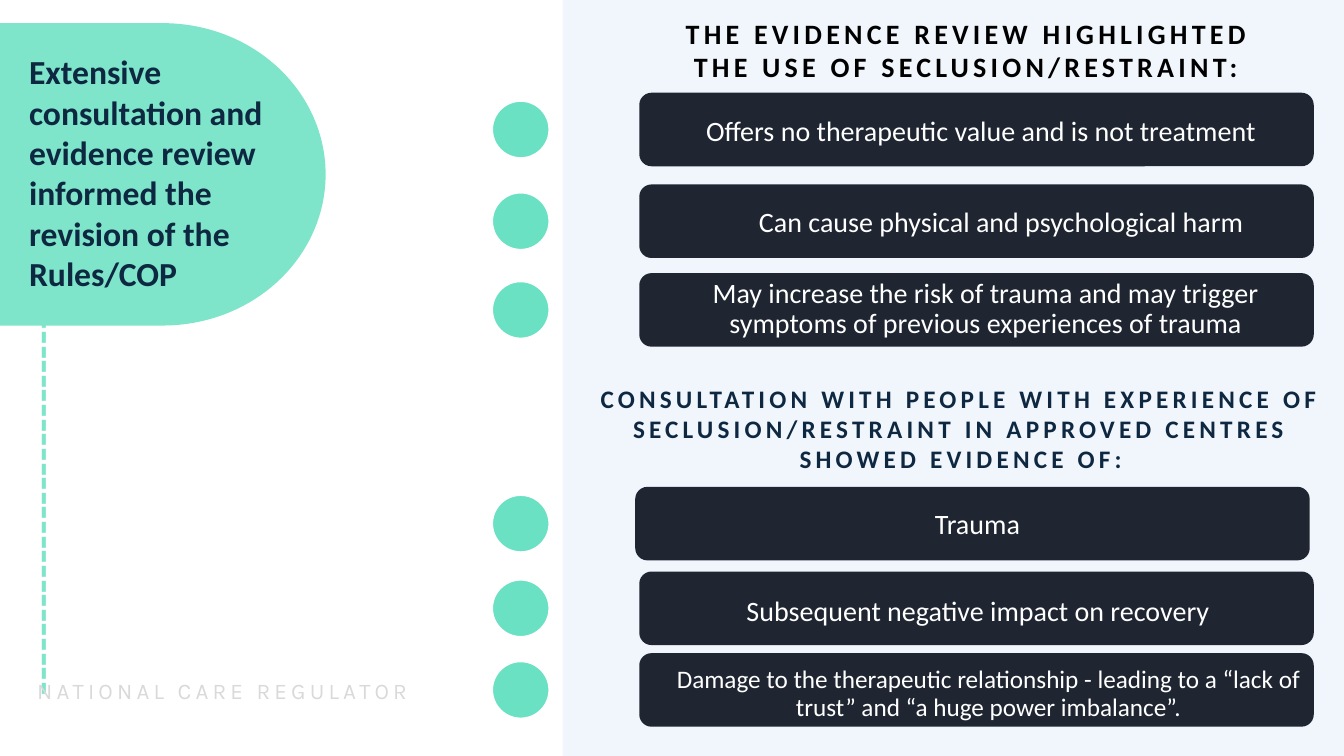
from lxml.etree import SubElement
from pptx import Presentation
from pptx.dml.color import RGBColor
from pptx.enum.shapes import MSO_SHAPE as Shape
from pptx.enum.text import MSO_AUTO_SIZE as AutoSize, PP_ALIGN as Align
from pptx.oxml.ns import qn
from pptx.util import Inches, Pt

COLOURS = {
    "mint": "7EE5CA", "dot": "6AE1C2", "panel": "B8D4F0", "bar": "1F2632",
    "navy": "0E2841", "black": "000000", "white": "FFFFFF", "footer": "D9D9D9",
}
BAR_SIZE = (6.69, 0.73)
DOT_LEFT, DOT_SIZE = 4.88, 0.57

CENTRED = {"alignment": Align.CENTER}
TIGHT = CENTRED | {"line_spacing": 0.9}
INDENTED = TIGHT | {"level": 1, "space_before": Pt(5)}
SPACED = TIGHT | {"space_before": Pt(10)}

# dot top, bar left and top, text box, size, paragraph format, wording
FINDINGS = [
    (1.0, 6.34, 0.92, (6.61, 1.08, 6.24, 0.44), 20, CENTRED,
     "Offers no therapeutic value and is not treatment"),
    (1.91, 6.34, 1.83, (6.34, 2.02, 6.68, 0.74), 20, INDENTED,
     "Can cause physical and psychological harm"),
    (2.79, 6.34, 2.71, (6.35, 2.72, 6.35, 0.71), 20, INDENTED,
     "May increase the risk of trauma and may trigger symptoms of previous experiences of trauma"),
    (4.91, 6.3, 4.83, (6.91, 4.98, 5.57, 0.44), 20, CENTRED, "Trauma"),
    (5.75, 6.34, 5.67, (5.97, 5.84, 7.46, 0.44), 20, CENTRED,
     "Subsequent negative impact on recovery"),
    (6.56, 6.34, 6.48, (6.61, 6.57, 6.39, 1.36), 18, SPACED,
     "Damage to the therapeutic relationship - leading to a “lack of trust” "
     "and “a huge power imbalance”."),
]


def colour(name):
    return RGBColor.from_string(COLOURS[name])


class SlideBuilder:
    def __init__(self, slide, font="Calibri"):
        self.shapes = slide.shapes
        self.font = font

    def block(self, kind, box, fill, outline=None, opacity=None):
        """Add a filled preset shape; opacity is a percentage."""
        shape = self.shapes.add_shape(kind, *map(Inches, box))
        shape.shadow.inherit = False
        shape.fill.solid()
        shape.fill.fore_color.rgb = colour(fill)
        if opacity is not None:
            rgb = shape.fill._xPr.find(".//" + qn("a:srgbClr"))
            SubElement(rgb, qn("a:alpha"), val=str(opacity * 1000))
        if outline:
            shape.line.color.rgb = colour(outline)
            shape.line.width = Pt(1.5)
        else:
            shape.line.fill.background()

    def text(self, box, lines, size, ink, layout=None, bold=False,
             tracking=0, font=None, rotation=0):
        """Add a text box with one paragraph per line; tracking is in points."""
        area = self.shapes.add_textbox(*map(Inches, box))
        area.rotation = rotation
        frame = area.text_frame
        frame.word_wrap = True
        frame.auto_size = AutoSize.SHAPE_TO_FIT_TEXT
        frame.text = lines
        style = {"name": font or self.font, "size": Pt(size), "bold": bold}
        for paragraph in frame.paragraphs:
            for key, value in (layout or {}).items():
                setattr(paragraph, key, value)
            if paragraph.level:
                properties = paragraph._p.get_or_add_pPr()
                properties.set("marL", str(Inches(0.5)))
                properties.set("indent", "0")
            for run in paragraph.runs:
                for key, value in style.items():
                    setattr(run.font, key, value)
                run.font.color.rgb = colour(ink)
                if tracking:
                    run.font._element.set("spc", str(tracking * 100))

    def finding(self, dot_top, bar_left, bar_top, box, size, layout, wording):
        """Add a dot, its dark bar and the statement on the bar."""
        self.block(Shape.OVAL, (DOT_LEFT, dot_top, DOT_SIZE, DOT_SIZE), "dot", "white")
        self.block(Shape.ROUNDED_RECTANGLE, (bar_left, bar_top, *BAR_SIZE), "bar")
        self.text(box, wording, size, "white", layout)


def main():
    deck = Presentation()
    deck.slide_width, deck.slide_height = Inches(13.33), Inches(7.5)
    page = SlideBuilder(deck.slides.add_slide(deck.slide_layouts[6]))

    page.text((-3.41, 4.03, 7.78, 0.57), "-" * 44, 28, "mint",
              bold=True, font="Karla", rotation=90)
    page.block(Shape.FLOWCHART_DELAY, (0, 0.23, 3.23, 3), "mint")
    page.block(Shape.RECTANGLE, (5.58, -0.01, 8.23, 7.65), "panel", opacity=19)
    page.text((0.19, 0.46, 2.85, 2.52),
              "Extensive consultation and evidence review informed "
              "the revision of the Rules/COP", 24, "navy", bold=True)
    page.text((5.78, 0.11, 7.6, 0.77),
              "THE EVIDENCE REVIEW HIGHLIGHTED\nTHE USE OF SECLUSION/RESTRAINT:",
              20, "black", CENTRED, bold=True, tracking=3)
    page.text((5.78, 3.75, 7.5, 1.01),
              "CONSULTATION WITH PEOPLE WITH EXPERIENCE OF SECLUSION/RESTRAINT "
              "IN APPROVED CENTRES SHOWED EVIDENCE OF:",
              18, "navy", CENTRED, bold=True, tracking=3)
    for row in FINDINGS:
        page.finding(*row)
    page.text((0.27, 6.67, 4.95, 0.37), "NATIONAL CARE REGULATOR", 16, "footer",
              tracking=3, font="Karla")

    deck.save("out.pptx")


if __name__ == "__main__":
    main()
